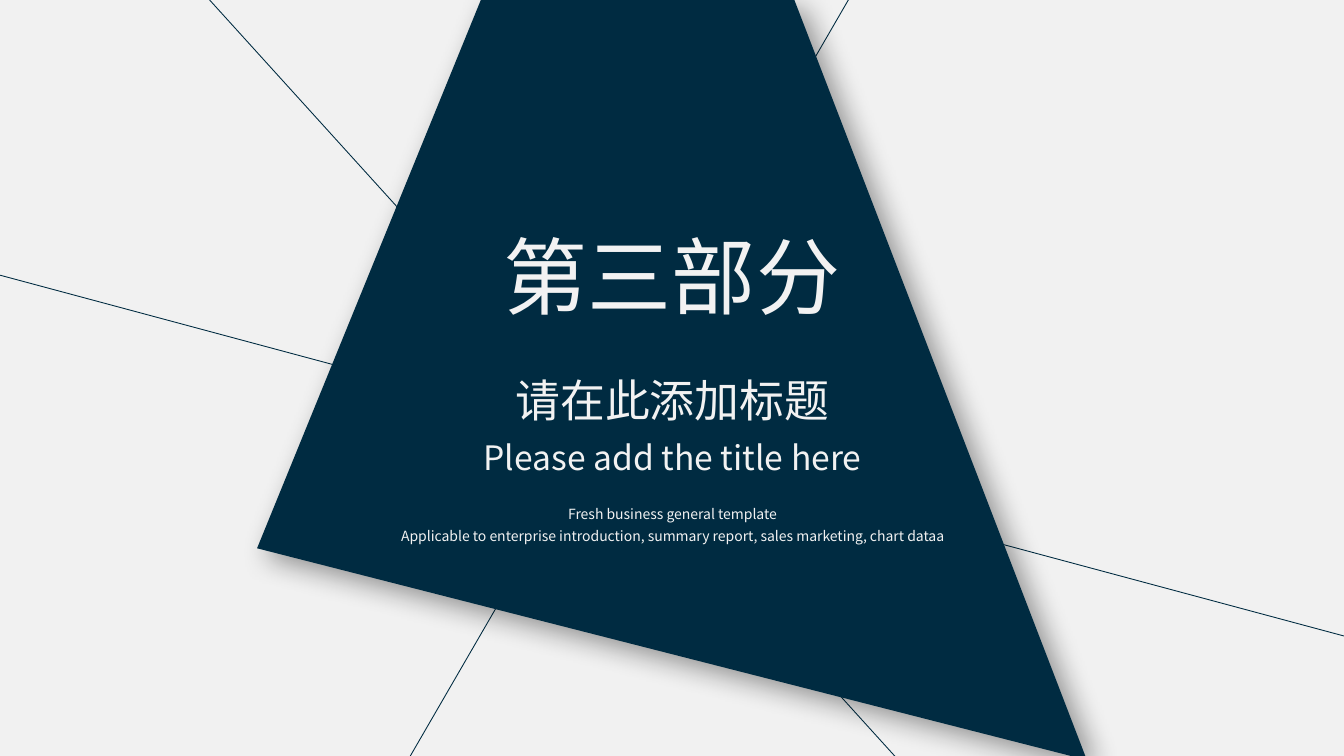
"""Build a section divider slide with a slanted panel and crossing lines."""
import lxml.etree
import pptx
import pptx.dml.color
import pptx.enum.shapes
import pptx.enum.text
import pptx.oxml.ns
import pptx.util

WIDTH = pptx.util.Inches(13.33)
HEIGHT = pptx.util.Inches(7.5)
FONT = "Noto Sans CJK SC"
COLOURS = {"paper": "F1F1F1", "navy": "002B41", "text": "F2F2F2", "shadow": "000000"}


def colour(name):
    """Return the named colour."""
    return pptx.dml.color.RGBColor.from_string(COLOURS[name])


def across(percent):
    """Return a percentage of the slide width."""
    return round(WIDTH * percent / 100)


def down(percent):
    """Return a percentage of the slide height."""
    return round(HEIGHT * percent / 100)


def add_child(parent, tag, **attributes):
    """Append a DrawingML element to a parent."""
    return lxml.etree.SubElement(parent, pptx.oxml.ns.qn(tag), attributes)


def add_line(page, start, end):
    """Draw a thin line between two points."""
    line = page.shapes.add_connector(
        pptx.enum.shapes.MSO_CONNECTOR.STRAIGHT,
        across(start[0]), down(start[1]), across(end[0]), down(end[1]))
    line.line.color.rgb = colour("navy")
    line.line.width = pptx.util.Pt(0.63)
    add_child(line.element.spPr, "a:effectLst")


def add_panel(page, corners):
    """Draw the filled panel with its soft shadow."""
    points = [(across(x), down(y)) for x, y in corners]
    builder = page.shapes.build_freeform(*points[0])
    builder.add_line_segments(points[1:], close=True)
    panel = builder.convert_to_shape()
    panel.fill.solid()
    panel.fill.fore_color.rgb = colour("navy")
    panel.line.fill.background()
    panel.shadow.inherit = False
    effects = panel.element.spPr.find(pptx.oxml.ns.qn("a:effectLst"))
    shadow = add_child(
        effects, "a:outerShdw", blurRad=str(pptx.util.Pt(20)),
        dist=str(pptx.util.Pt(10)), dir=str(45 * 60000), algn="tl", rotWithShape="0")
    tint = add_child(shadow, "a:srgbClr", val=COLOURS["shadow"])
    add_child(tint, "a:alpha", val="40000")


def write_text(box, area, text, size, spacing=1.0, wrap=True):
    """Place a text holder in front and format its centred text."""
    left, top, width, height = area
    box.left, box.top = across(left), down(top)
    box.width, box.height = across(width), down(height)
    box.element.getparent().append(box.element)
    frame = box.text_frame
    frame.text = text
    frame.word_wrap = wrap
    frame.auto_size = pptx.enum.text.MSO_AUTO_SIZE.SHAPE_TO_FIT_TEXT
    frame.vertical_anchor = pptx.enum.text.MSO_ANCHOR.TOP
    for para in frame.paragraphs:
        para.alignment = pptx.enum.text.PP_ALIGN.CENTER
        para.line_spacing = spacing
        para.space_before = pptx.util.Pt(0)
        for span in para.runs:
            span.font.size = pptx.util.Pt(size)
            span.font.color.rgb = colour("text")
            span.font.name = FONT
            add_child(span.font._element, "a:ea", typeface=FONT)


def main():
    """Build and save the slide."""
    deck = pptx.Presentation()
    deck.slide_width, deck.slide_height = WIDTH, HEIGHT
    page = deck.slides.add_slide(deck.slide_layouts[0])
    page.background.fill.solid()
    page.background.fill.fore_color.rgb = colour("paper")

    for start, end in (
        ((63.99, -2.67), (30.53, 100)),
        ((66.84, 100.53), (15.6, 0)),
        ((0, 36.4), (100, 84.13)),
    ):
        add_line(page, start, end)
    add_panel(page, [(35.78, 0), (59.11, 0), (80.87, 100.53), (19.13, 72.53)])

    title, subtitle = page.placeholders
    description, translation = (page.shapes.add_textbox(0, 0, 0, 0) for _ in range(2))
    write_text(title, (36.61, 29.07, 26.78, 14.8), "第三部分", 60, wrap=False)
    write_text(
        description, (19.2, 65.6, 61.67, 7.2),
        "Fresh business general template\n"
        "Applicable to enterprise introduction, summary report, sales marketing, chart dataa",
        10, spacing=1.3)
    write_text(translation, (34.66, 57.07, 30.76, 6.67),
               "Please add the title here", 24, wrap=False)
    write_text(subtitle, (35.48, 48.67, 29.11, 8.53), "请在此添加标题", 32)
    deck.save("out.pptx")


if __name__ == "__main__":
    main()
